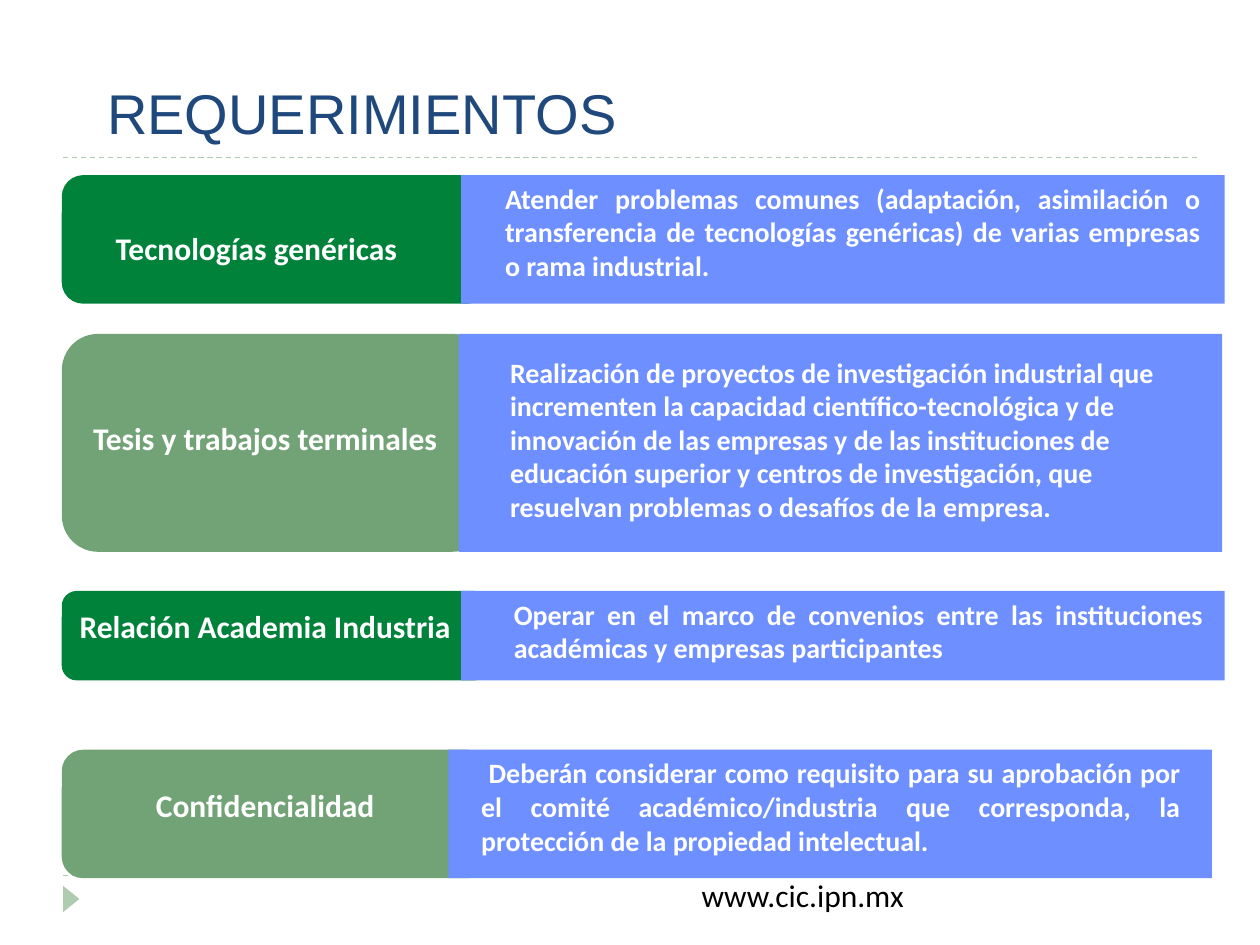
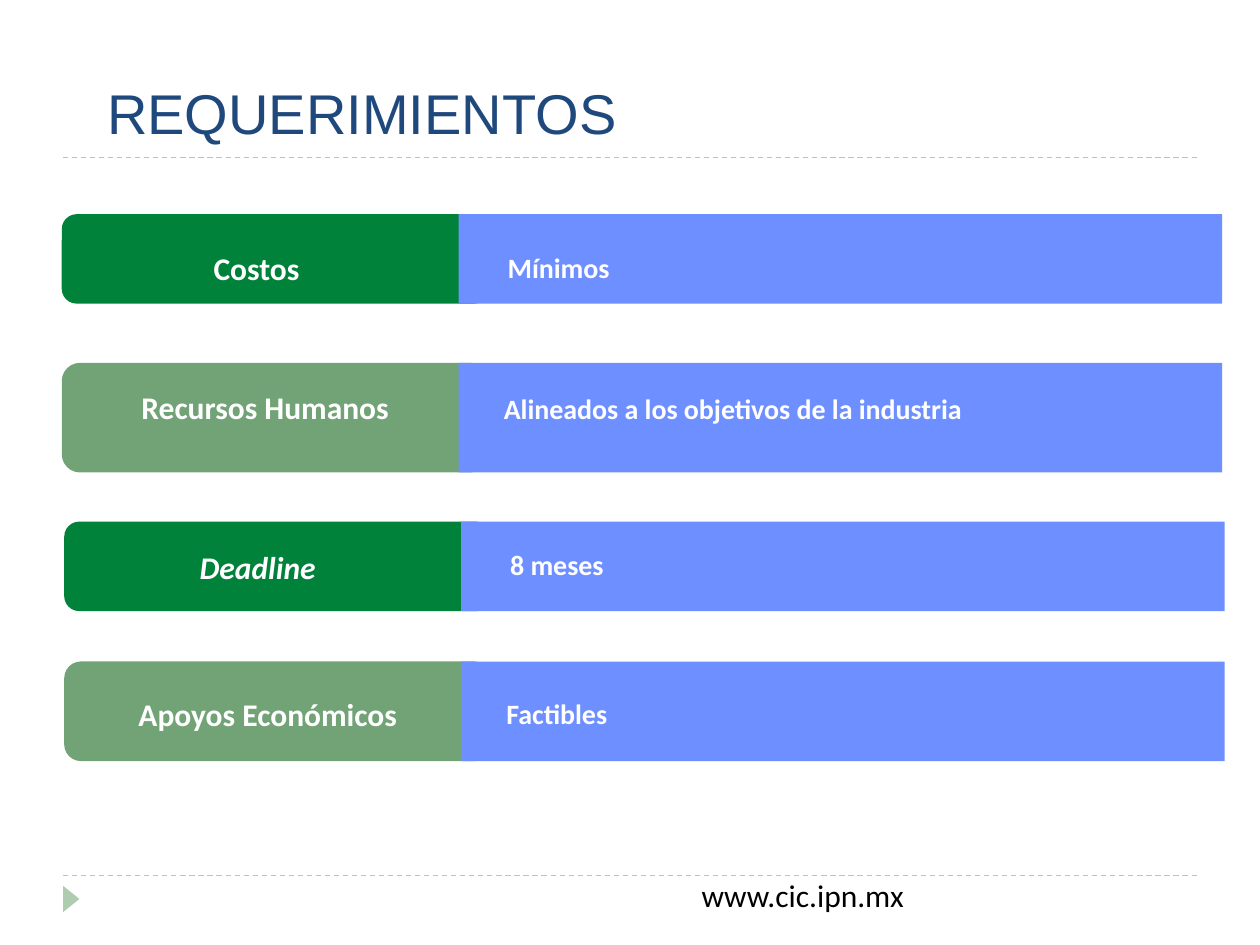
from dataclasses import dataclass
from typing import NamedTuple

from lxml import etree
from pptx import Presentation
from pptx import util as u
from pptx.dml.color import RGBColor
from pptx.enum import dml, shapes, text
from pptx.oxml.ns import qn


@dataclass(frozen=True)
class Theme:
    dark_green: str = "00823B"
    soft_green: str = "72A376"
    pale_green: str = "B0CCB0"
    blue: str = "6E8FFF"
    navy: str = "1F497D"
    white: str = "FFFFFF"
    black: str = "000000"
    title_font: str = "Arial"
    body_font: str = "Calibri"
    title_size: int = 32
    label_size: int = 18
    detail_size: int = 16


THEME = Theme()


class Box(NamedTuple):
    left: float
    top: float
    width: float
    height: float

    def inches(self) -> list:
        return [u.Inches(value) for value in self]


@dataclass(frozen=True)
class Label:
    text: str
    left: float
    top: float
    italic: bool = False


@dataclass(frozen=True)
class Detail:
    text: str
    left: float
    top: float
    width: float = 5.75
    lines: int = 1
    justified: bool = False
    indent: float = 0
    first_line: float = 0


@dataclass(frozen=True)
class Requirement:
    top: float
    height: float
    tab_left: float
    band_left: float
    label: Label
    detail: Detail


TITLE = "REQUERIMIENTOS"
TITLE_BOX = Box(0.75, 0.13, 8.2, 1.08)
TAB_WIDTH, BAND_WIDTH = 3.39, 6.06
LABEL_HEIGHT, LINE_HEIGHT, TEXT_MARGINS = 0.4, 0.27, 0.1
INDENT = 0.19

SLIDES = [
    [
        Requirement(1.39, 1.02, 0.49, 3.66,
                    Label("Tecnologías genéricas", 0.34, 1.77),
                    Detail("Atender problemas comunes (adaptación, asimilación o "
                           "transferencia de tecnologías genéricas) de varias "
                           "empresas o rama industrial.",
                           3.72, 1.39, 5.91, 3, True, INDENT)),
        Requirement(2.65, 1.73, 0.49, 3.64,
                    Label("Tesis y trabajos terminales", 0.41, 3.28),
                    Detail("Realización de proyectos de investigación industrial "
                           "que incrementen la capacidad científico-tecnológica y "
                           "de innovación de las empresas y de las instituciones "
                           "de educación superior y centros de investigación, que "
                           "resuelvan problemas o desafíos de la empresa.",
                           3.95, 2.77, lines=5)),
        Requirement(4.69, 0.71, 0.49, 3.66,
                    Label("Relación Academia Industria", 0.41, 4.77),
                    Detail("Operar en el marco de convenios entre las "
                           "instituciones académicas y empresas participantes",
                           3.98, 4.69, 5.67, 2, True)),
        Requirement(5.95, 1.02, 0.49, 3.56,
                    Label("Confidencialidad", 0.41, 6.19),
                    Detail("Deberán considerar como requisito para su aprobación "
                           "por el comité académico/industria que corresponda, la "
                           "protección de la propiedad intelectual.",
                           3.72, 5.95, lines=3, justified=True, first_line=0.06)),
    ],
    [
        Requirement(1.7, 0.71, 0.49, 3.64,
                    Label("Costos", 0.34, 1.93),
                    Detail("Mínimos", 3.74, 1.94, 5.91, 1, True, INDENT)),
        Requirement(2.88, 0.87, 0.49, 3.64,
                    Label("Recursos Humanos", 0.41, 3.03),
                    Detail("Alineados a los objetivos de la industria", 3.9, 3.06)),
        Requirement(4.14, 0.71, 0.51, 3.66,
                    Label("Deadline", 0.35, 4.3, italic=True),
                    Detail("8 meses", 3.76, 4.3, 5.91, 1, True, INDENT)),
        Requirement(5.25, 0.79, 0.51, 3.66,
                    Label("Apoyos Económicos", 0.43, 5.47),
                    Detail("Factibles", 3.92, 5.48)),
    ],
]


def rgb(color: str) -> RGBColor:
    return RGBColor.from_string(color)


def format_text(paragraph, font_name: str, size: int, color: str,
                bold: bool = False, italic: bool = False) -> None:
    for run in paragraph.runs:
        run.font.name = font_name
        run.font.size = u.Pt(size)
        run.font.color.rgb = rgb(color)
        run.font.bold = bold
        run.font.italic = italic


def add_block(slide, preset, box: Box, color: str):
    shape = slide.shapes.add_shape(preset, *box.inches())
    shape.shadow.inherit = False
    shape.fill.solid()
    shape.fill.fore_color.rgb = rgb(color)
    shape.line.fill.background()
    return shape


def add_text(slide, box: Box, content: str, size: int, color: str,
             align=text.PP_ALIGN.LEFT, wrap: bool = True, bold: bool = True,
             italic: bool = False):
    shape = slide.shapes.add_textbox(*box.inches())
    frame = shape.text_frame
    frame.word_wrap = wrap
    frame.auto_size = text.MSO_AUTO_SIZE.SHAPE_TO_FIT_TEXT
    frame.text = content
    frame.paragraphs[0].alignment = align
    format_text(frame.paragraphs[0], THEME.body_font, size, color, bold, italic)
    return shape


def add_rule(slide, top: float):
    rule = slide.shapes.add_connector(
        shapes.MSO_CONNECTOR.STRAIGHT,
        u.Inches(0.5), u.Inches(top), u.Inches(9.5), u.Inches(top))
    rule.line.color.rgb = rgb(THEME.pale_green)
    rule.line.width = u.Pt(0.75)
    rule.line.dash_style = dml.MSO_LINE.DASH
    etree.SubElement(rule.element.spPr, qn("a:effectLst"))
    return rule


def furnish_layout(layout, slide) -> None:
    """Draw the shared decoration on a slide and move it to its layout."""
    marker = add_block(slide, shapes.MSO_SHAPE.ISOSCELES_TRIANGLE,
                       Box(0.46, 7.07, 0.21, 0.13), THEME.pale_green)
    marker.rotation = 90
    address = add_text(slide, Box(5.47, 6.9, 1.82, 0.4), "www.cic.ipn.mx",
                       THEME.label_size, THEME.black, wrap=False, bold=False)
    decoration = [add_rule(slide, 6.95), add_rule(slide, 1.25), marker, address]
    for number, shape in enumerate(decoration, start=100):
        shape.element.xpath(".//p:cNvPr")[0].set("id", str(number))
        layout.shapes.element.append(shape.element)


def set_title(slide) -> None:
    title = slide.shapes.title
    title.left, title.top, title.width, title.height = TITLE_BOX.inches()
    frame = title.text_frame
    frame.text = TITLE
    frame.vertical_anchor = text.MSO_ANCHOR.BOTTOM
    frame.paragraphs[0].alignment = text.PP_ALIGN.LEFT
    format_text(frame.paragraphs[0], THEME.title_font, THEME.title_size, THEME.navy)


def add_requirement(slide, item: Requirement, tab_color: str) -> None:
    # Coloured tab and the band that covers its right end
    add_block(slide, shapes.MSO_SHAPE.ROUNDED_RECTANGLE,
              Box(item.tab_left, item.top, TAB_WIDTH, item.height), tab_color)
    add_block(slide, shapes.MSO_SHAPE.RECTANGLE,
              Box(item.band_left, item.top, BAND_WIDTH, item.height), THEME.blue)

    # Label and detail
    label, detail = item.label, item.detail
    add_text(slide, Box(label.left, label.top, TAB_WIDTH, LABEL_HEIGHT), label.text,
             THEME.label_size, THEME.white, text.PP_ALIGN.CENTER,
             italic=label.italic)
    height = detail.lines * LINE_HEIGHT + TEXT_MARGINS
    align = text.PP_ALIGN.JUSTIFY if detail.justified else text.PP_ALIGN.LEFT
    shape = add_text(slide, Box(detail.left, detail.top, detail.width, height),
                     detail.text, THEME.detail_size, THEME.white, align)
    properties = shape.text_frame.paragraphs[0]._p.get_or_add_pPr()
    properties.set("marL", str(u.Inches(detail.indent)))
    properties.set("indent", str(u.Inches(detail.first_line)))


def main() -> None:
    presentation = Presentation()
    presentation.slide_width = u.Inches(10)
    presentation.slide_height = u.Inches(7.5)
    layout = presentation.slide_layouts.get_by_name("Title Only")
    tab_colors = (THEME.dark_green, THEME.soft_green)

    for slide_index, requirements in enumerate(SLIDES):
        slide = presentation.slides.add_slide(layout)
        if slide_index == 0:
            furnish_layout(layout, slide)
        set_title(slide)
        for index, item in enumerate(requirements):
            add_requirement(slide, item, tab_colors[index % 2])

    presentation.save("out.pptx")


if __name__ == "__main__":
    main()
